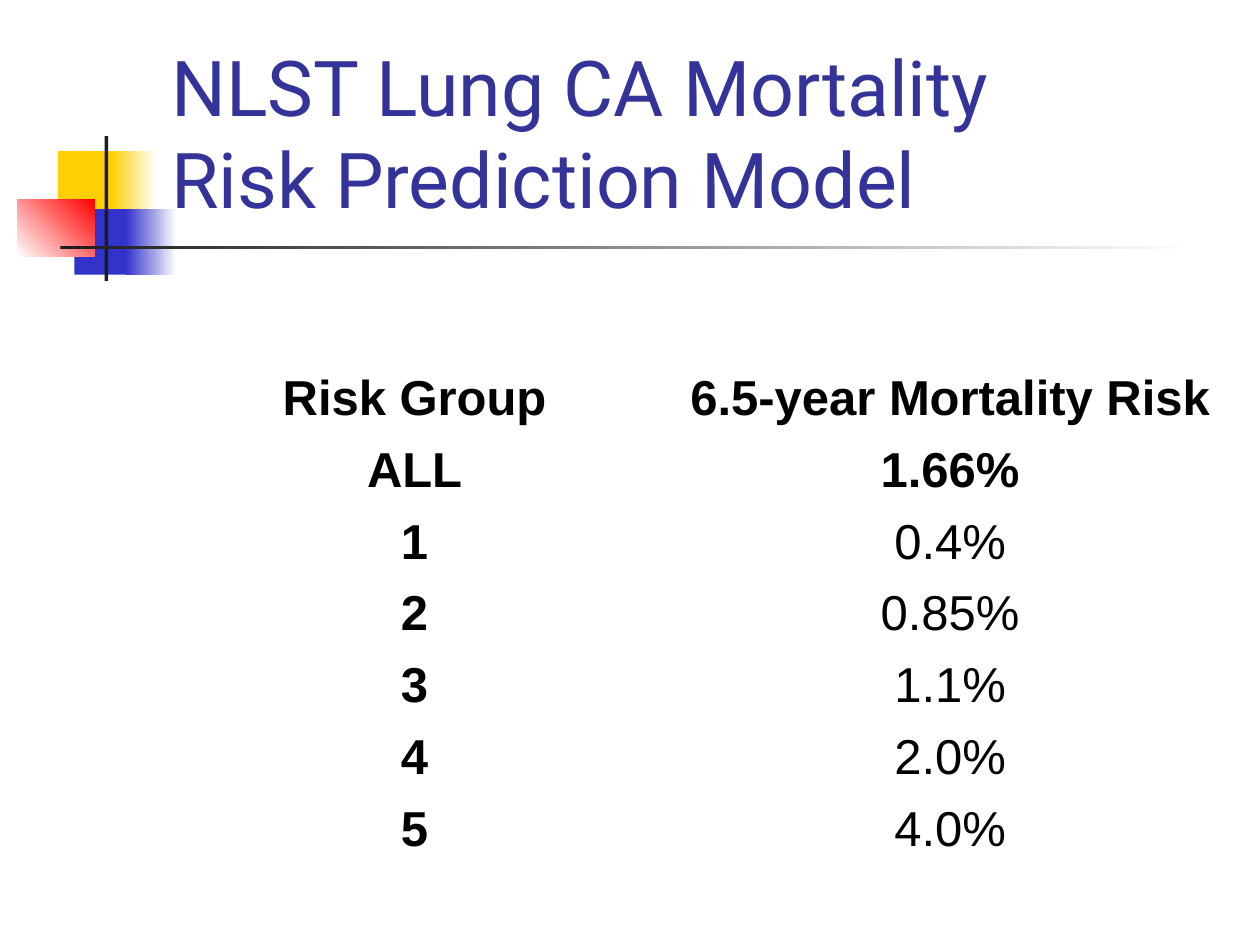
from dataclasses import dataclass
from pptx import Presentation
from pptx.dml.color import RGBColor
from pptx.enum.shapes import MSO_SHAPE
from pptx.enum.text import MSO_ANCHOR, PP_ALIGN
from pptx.util import Inches, Pt

RECT = MSO_SHAPE.RECTANGLE
BOTTOM = MSO_ANCHOR.BOTTOM
CENTER = PP_ALIGN.CENTER

COLORS = {
    "gold": "FFCF01",
    "blue": "3333CC",
    "red": "FF0000",
    "dark": "1C1C1C",
    "white": "FFFFFF",
    "title": "333399",
    "black": "000000",
}


@dataclass
class Block:
    left: float
    top: float
    width: float
    height: float
    color: str
    end: str = ""
    angle: int = 0


BLOCKS = [
    Block(0.46, 1.2, 0.48, 0.52, "gold"),
    Block(0.88, 1.2, 0.36, 0.52, "gold", "white"),
    Block(0.59, 1.66, 0.46, 0.52, "blue"),
    Block(1, 1.66, 0.4, 0.52, "blue", "white"),
    Block(0.14, 1.58, 0.61, 0.46, "white", "red", 45),
    Block(0.83, 1.08, 0.03, 1.15, "dark"),
    Block(0.48, 1.95, 9, 0.03, "dark", "white"),
]

ROWS = [
    ("Risk Group", "6.5-year Mortality Risk"),
    ("ALL", "1.66%"),
    ("1", "0.4%"),
    ("2", "0.85%"),
    ("3", "1.1%"),
    ("4", "2.0%"),
    ("5", "4.0%"),
]
WIDTHS = [4, 4.5]
HEIGHTS = [1.22] + [0.57] * 6


def rgb(name: str) -> RGBColor:
    return RGBColor.from_string(COLORS[name])


def style(frame, face: str, size: int, color: str, bold: bool) -> None:
    for line in frame.paragraphs:
        for run in line.runs:
            run.font.name = face
            run.font.size = Pt(size)
            run.font.bold = bold
            run.font.color.rgb = rgb(color)


def draw_block(slide, block: Block) -> None:
    shape = slide.shapes.add_shape(
        RECT, Inches(block.left), Inches(block.top),
        Inches(block.width), Inches(block.height))
    shape.shadow.inherit = False
    shape.line.fill.background()
    fill = shape.fill
    if block.end:
        fill.gradient()
        fill.gradient_angle = block.angle
        for stop, name in zip(fill.gradient_stops, (block.color, block.end)):
            stop.color.rgb = rgb(name)
    else:
        fill.solid()
        fill.fore_color.rgb = rgb(block.color)


def draw_title(slide, text: str) -> None:
    box = slide.shapes.add_textbox(
        Inches(1.26), Inches(0.23), Inches(8.52), Inches(1.6))
    frame = box.text_frame
    frame.word_wrap = True
    frame.vertical_anchor = BOTTOM
    frame.text = text
    style(frame, "Roboto", 44, "title", False)


def draw_table(slide) -> None:
    table = slide.shapes.add_table(
        len(ROWS), len(WIDTHS), Inches(1.29), Inches(2.21),
        Inches(sum(WIDTHS)), Inches(sum(HEIGHTS))).table
    table.first_row = False
    table.horz_banding = False
    for col, width in zip(table.columns, WIDTHS):
        col.width = Inches(width)
    for row, height in zip(table.rows, HEIGHTS):
        row.height = Inches(height)
    for i, row in enumerate(ROWS):
        for j, text in enumerate(row):
            cell = table.cell(i, j)
            cell.fill.background()
            cell.vertical_anchor = BOTTOM
            cell.text_frame.text = text
            cell.text_frame.paragraphs[0].alignment = CENTER
            style(cell.text_frame, "Arial", 28, "black", j == 0 or i < 2)


def main() -> None:
    deck = Presentation()
    deck.slide_width = Inches(10)
    deck.slide_height = Inches(7.5)
    slide = deck.slides.add_slide(deck.slide_layouts[6])
    for block in BLOCKS:
        draw_block(slide, block)
    draw_title(slide, "NLST Lung CA Mortality \vRisk Prediction Model")
    draw_table(slide)
    deck.save("out.pptx")


if __name__ == "__main__":
    main()
